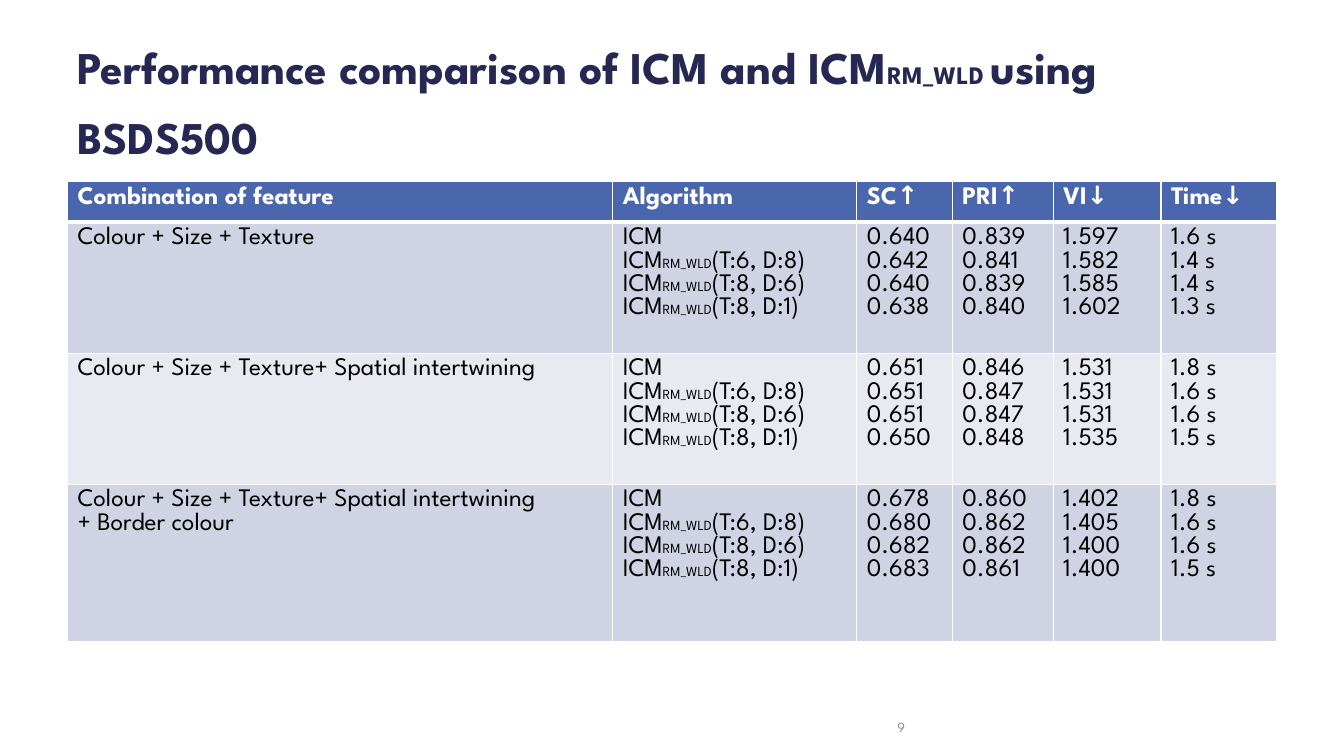
from dataclasses import dataclass
from typing import NamedTuple

from lxml import etree
from pptx import Presentation
from pptx.dml.color import RGBColor
from pptx.enum.text import MSO_ANCHOR, PP_ALIGN
from pptx.oxml.ns import qn
from pptx.util import Cm, Pt

MIDDLE = MSO_ANCHOR.MIDDLE
LEFT, RIGHT = PP_ALIGN.LEFT, PP_ALIGN.RIGHT
SMALL = "RM_WLD"


class Style(NamedTuple):
    size: float
    color: str
    bold: bool = False
    small: float = 10


@dataclass(frozen=True)
class Theme:
    font: str = "League Spartan"
    title: Style = Style(32.4, "242852", True, 18)
    head: Style = Style(18, "FFFFFF", True)
    body: Style = Style(18, "000000")
    page: Style = Style(10, "8C8C8C")
    header: str = "4A66AC"
    bands: tuple[str, str] = ("D0D3E3", "E9EAF1")
    border: str = "FFFFFF"
    thin: int = 1
    thick: int = 3


class Label(NamedTuple):
    text: str
    left: float
    top: float
    width: float
    height: float
    style: Style
    align: PP_ALIGN = LEFT
    spacing: float = 1.0


class Group(NamedTuple):
    feature: str
    sc: tuple[float, ...]
    pri: tuple[float, ...]
    vi: tuple[float, ...]
    time: tuple[float, ...]


THEME = Theme()
LABELS = [
    Label("Performance comparison of ICM and ICMRM_WLD using BSDS500",
          1.7, 0.76, 30.48, 3.18, THEME.title, spacing=1.3),
    Label("9", 19.48, 17.98, 3.58, 0.69, THEME.page, RIGHT),
]
HEADS = ["Combination of feature", "Algorithm", "SC↑", "PRI↑", "VI↓", "Time↓"]
WIDTHS = [13.74, 6.15, 2.41, 2.54, 2.72, 2.92]
HEIGHTS = [0.99, 3.2, 3.2, 3.96]
METHODS = "\n".join(["ICM"] + [
    f"ICM{SMALL}(T:{t}, D:{d})" for t, d in [(6, 8), (8, 6), (8, 1)]])
GROUPS = [
    Group("Colour + Size + Texture",
          (0.640, 0.642, 0.640, 0.638), (0.839, 0.841, 0.839, 0.840),
          (1.597, 1.582, 1.585, 1.602), (1.6, 1.4, 1.4, 1.3)),
    Group("Colour + Size + Texture+ Spatial intertwining",
          (0.651, 0.651, 0.651, 0.650), (0.846, 0.847, 0.847, 0.848),
          (1.531, 1.531, 1.531, 1.535), (1.8, 1.6, 1.6, 1.5)),
    Group("Colour + Size + Texture+ Spatial intertwining\n+ Border colour",
          (0.678, 0.680, 0.682, 0.683), (0.860, 0.862, 0.862, 0.861),
          (1.402, 1.405, 1.400, 1.400), (1.8, 1.6, 1.6, 1.5)),
]


def write(frame, text: str, style: Style) -> None:
    frame.text = text
    for para in frame.paragraphs:
        start, small, rest = para.text.partition(SMALL)
        para.text = start
        if small:
            gap = " " if rest.startswith(" ") else ""
            para.add_run().text = small + gap
            para.add_run().text = rest.removeprefix(gap)
        for run in para.runs:
            font = run.font
            font.name = THEME.font
            font.size = Pt(style.small if run.text.startswith(SMALL) else style.size)
            font.bold = style.bold
            font.color.rgb = RGBColor.from_string(style.color)


def add_label(slide, label: Label) -> None:
    place = (label.left, label.top, label.width, label.height)
    frame = slide.shapes.add_textbox(*map(Cm, place)).text_frame
    frame.word_wrap = True
    frame.vertical_anchor = MIDDLE
    write(frame, label.text, label.style)
    para = frame.paragraphs[0]
    para.alignment = label.align
    para.line_spacing = label.spacing


def add_border(cell, side: str, width: int) -> None:
    props = cell._tc.get_or_add_tcPr()
    line = etree.SubElement(props, qn(f"a:ln{side}"), w=str(Pt(width)))
    fill = etree.SubElement(line, qn("a:solidFill"))
    etree.SubElement(fill, qn("a:srgbClr"), val=THEME.border)


def fill_cell(cell, text: str, row: int) -> None:
    write(cell.text_frame, text, THEME.body if row else THEME.head)
    for side in "LRTB":
        thick = (row, side) in ((0, "B"), (1, "T"))
        add_border(cell, side, THEME.thick if thick else THEME.thin)
    cell.fill.solid()
    color = THEME.bands[(row - 1) % 2] if row else THEME.header
    cell.fill.fore_color.rgb = RGBColor.from_string(color)


def list_cells(group: Group) -> list[str]:
    scores = ["\n".join(f"{value:.3f}" for value in column)
              for column in (group.sc, group.pri, group.vi)]
    times = "\n".join(f"{value} s" for value in group.time)
    return [group.feature, METHODS, *scores, times]


def add_scores(slide) -> None:
    rows = [HEADS] + [list_cells(group) for group in GROUPS]
    table = slide.shapes.add_table(
        len(rows), len(HEADS), Cm(1.7), Cm(4.58),
        Cm(sum(WIDTHS)), Cm(sum(HEIGHTS))).table
    for column, width in zip(table.columns, WIDTHS):
        column.width = Cm(width)
    for row, height in zip(table.rows, HEIGHTS):
        row.height = Cm(height)
    for row, texts in enumerate(rows):
        for col, text in enumerate(texts):
            fill_cell(table.cell(row, col), text, row)


def main() -> None:
    deck = Presentation()
    deck.slide_width, deck.slide_height = Cm(33.87), Cm(19.05)
    slide = deck.slides.add_slide(deck.slide_layouts[6])
    for label in LABELS:
        add_label(slide, label)
    add_scores(slide)
    deck.save("out.pptx")


if __name__ == "__main__":
    main()
